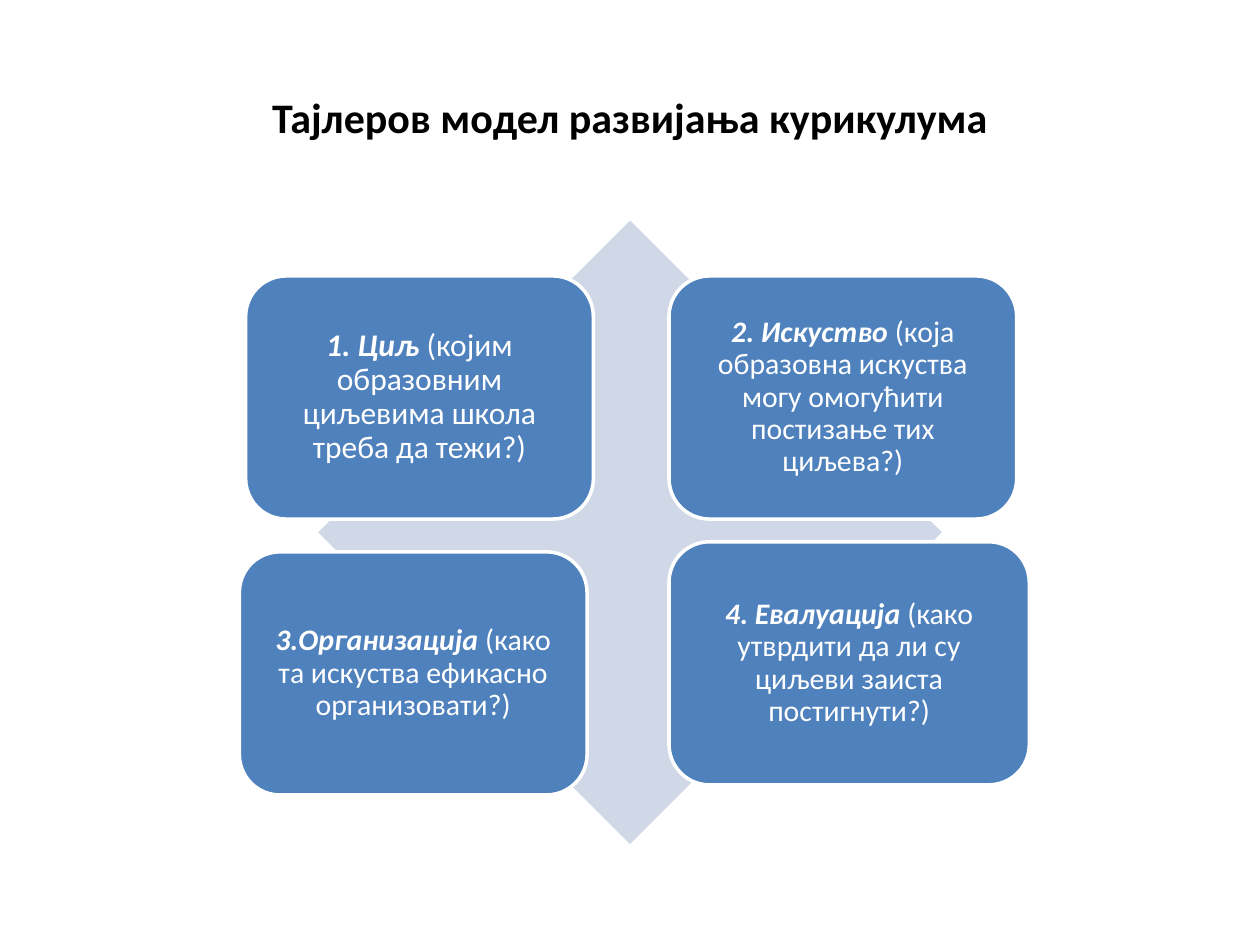
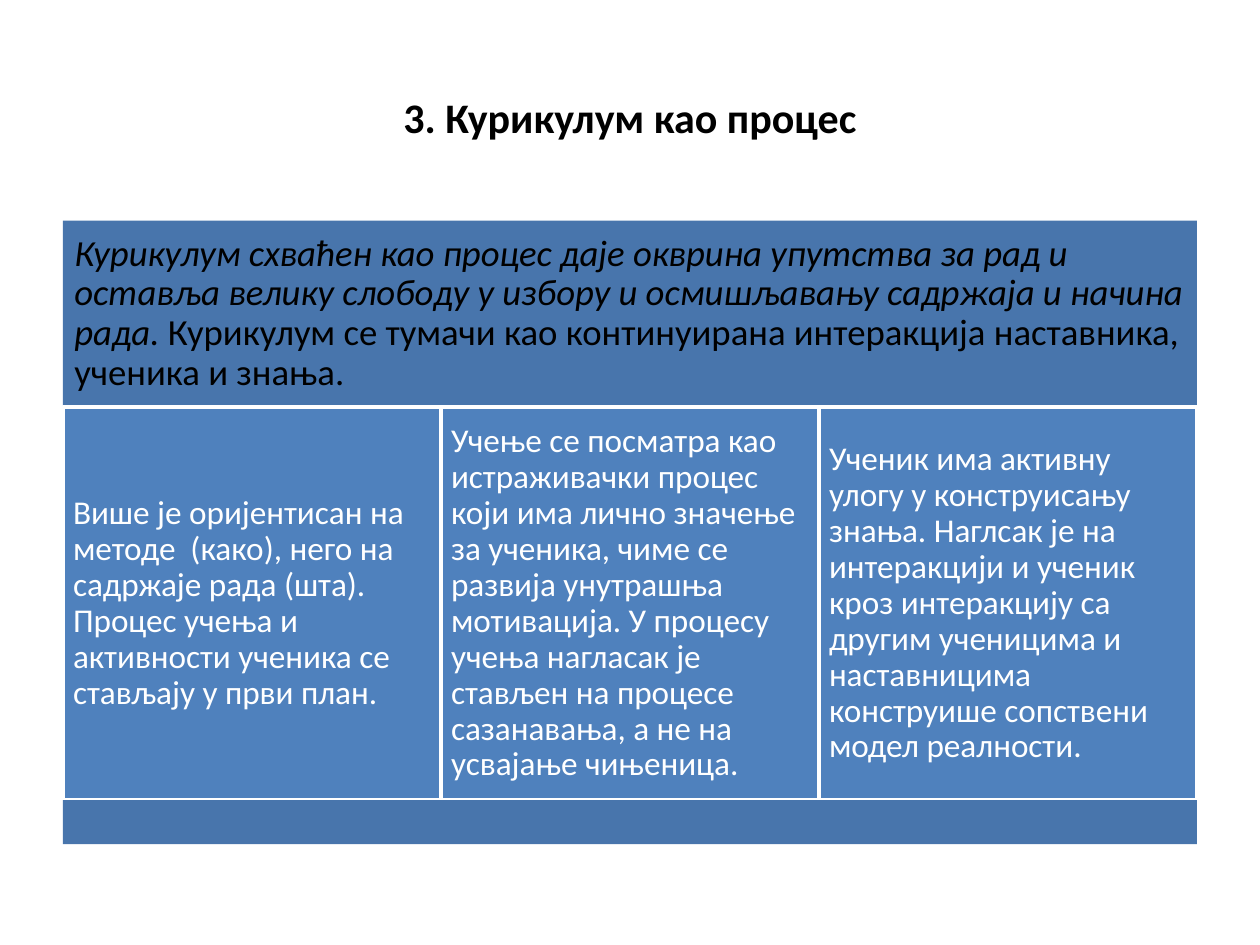
from dataclasses import dataclass
from pptx import Presentation
from pptx.dml.color import RGBColor
from pptx.enum.shapes import MSO_SHAPE
from pptx.enum.text import MSO_ANCHOR, PP_ALIGN
from pptx.util import Inches, Pt


@dataclass(frozen=True)
class Theme:
    face: str = "Calibri"
    ink: str = "000000"
    light: str = "FFFFFF"
    pale: str = "D0D8E8"
    blue: str = "4F81BD"
    deep: str = "4875AC"
    title: int = 24
    lead: int = 21
    body: int = 19
    first: int = 18
    card: int = 17
    edge: int = 2
    tight: float = 0.9


def assign(item, values):
    for name, value in values.items():
        setattr(item, name, value)


class Deck:
    COLS, ROWS = 20, 15

    def __init__(self, theme):
        self.theme = theme
        self.show = Presentation()
        assign(self.show, {"slide_width": Inches(10), "slide_height": Inches(7.5)})
        self.slide = None

    def page(self, title):
        self.slide = self.show.slides.add_slide(self.show.slide_layouts[6])
        box = self.slide.shapes.add_textbox(*self.area(1, 0.6, 18, 2.5))
        self.label(box, [(title, {"bold": True})], self.theme.title, self.theme.ink,
                   PP_ALIGN.CENTER, 0.1, 1.0)

    def area(self, col, row, wide, high):
        across = self.show.slide_width / self.COLS
        down = self.show.slide_height / self.ROWS
        return [round(n) for n in (col * across, row * down, wide * across, high * down)]

    def shape(self, kind, area, fill, edged=False):
        item = self.slide.shapes.add_shape(kind, *self.area(*area))
        item.shadow.inherit = False
        item.fill.solid()
        item.fill.fore_color.rgb = RGBColor.from_string(fill)
        if edged:
            item.line.color.rgb = RGBColor.from_string(self.theme.light)
            item.line.width = Pt(self.theme.edge)
        else:
            item.line.fill.background()
        return item

    def label(self, item, runs, size, color, align, inset, pitch):
        frame = item.text_frame
        sides = ("left", "right", "top", "bottom")
        assign(frame, {"word_wrap": True, "vertical_anchor": MSO_ANCHOR.MIDDLE}
               | {f"margin_{side}": Inches(inset) for side in sides})
        para = frame.paragraphs[0]
        assign(para, {"alignment": align, "line_spacing": pitch})
        for text, style in runs:
            run = para.add_run()
            run.text = text
            assign(run.font, {"name": self.theme.face, "size": Pt(size)} | style)
            run.font.color.rgb = RGBColor.from_string(color)

    def card(self, area, head, text, size):
        item = self.shape(MSO_SHAPE.ROUNDED_RECTANGLE, area, self.theme.blue, True)
        runs = [(head, {"bold": True, "italic": True}), (text, {})]
        self.label(item, runs, size, self.theme.light, PP_ALIGN.CENTER, 0.07,
                   self.theme.tight)

    def band(self, area, runs=()):
        item = self.shape(MSO_SHAPE.RECTANGLE, area, self.theme.deep)
        if runs:
            self.label(item, runs, self.theme.lead, self.theme.ink, PP_ALIGN.LEFT, 0.09,
                       self.theme.tight)

    def panel(self, area, text):
        item = self.shape(MSO_SHAPE.RECTANGLE, area, self.theme.blue, True)
        self.label(item, [(text, {})], self.theme.body, self.theme.light, PP_ALIGN.LEFT,
                   0.08, self.theme.tight)


def model(deck):
    theme = deck.theme
    deck.page("Тајлеров модел развијања курикулума")
    deck.shape(MSO_SHAPE.DIAMOND, (5.05, 3.5, 9.9, 9.9), theme.pale)
    cards = [
        (3.9, 4.38, 5.52, theme.first, "1. Циљ",
         " (којим образовним циљевима школа треба да тежи?)"),
        (10.62, 4.38, 5.52, theme.card, "2. Искуство",
         " (која образовна искуства могу омогућити постизање тих циљева?)"),
        (3.8, 8.76, 5.52, theme.card, "3.Организација ",
         "(како та искуства ефикасно организовати?)"),
        (10.62, 8.6, 5.72, theme.card, "4. Евалуација ",
         "(како утврдити да ли су циљеви заиста постигнути?)"),
    ]
    for col, row, wide, size, head, text in cards:
        deck.card((col, row, wide, 3.86), head, text, size)


def process(deck):
    left, top, wide = 1, 3.5, 18
    lead, body, foot = 2.96, 6.24, 0.7
    deck.page("3. Курикулум као процес")
    deck.band((left, top, wide, lead), [
        ("Курикулум схваћен као процес даје окврина упутства за рад и оставља велику "
         "слободу у избору и осмишљавању садржаја и начина рада. ", {"italic": True}),
        ("Курикулум се тумачи као континуирана интеракција наставника, ученика и знања.",
         {}),
    ])
    panels = [
        "Више је оријентисан на методе  (како), него на садржаје рада (шта). "
        "Процес учења и активности ученика се стављају у први план.",
        "Учење се посматра као истраживачки процес који има лично значење за ученика, "
        "чиме се развија унутрашња мотивација. У процесу учења нагласак је стављен на "
        "процесе сазанавања, а не на усвајање чињеница.",
        "Ученик има активну улогу у конструисању знања. Наглсак је на интеракцији и "
        "ученик кроз интеракцију са другим ученицима и наставницима конструише "
        "сопствени модел реалности.",
    ]
    step = wide / len(panels)
    for place, text in enumerate(panels):
        deck.panel((left + place * step, top + lead, step, body), text)
    deck.band((left, top + lead + body, wide, foot))


def main():
    deck = Deck(Theme())
    model(deck)
    process(deck)
    deck.show.save("out.pptx")


if __name__ == "__main__":
    main()
